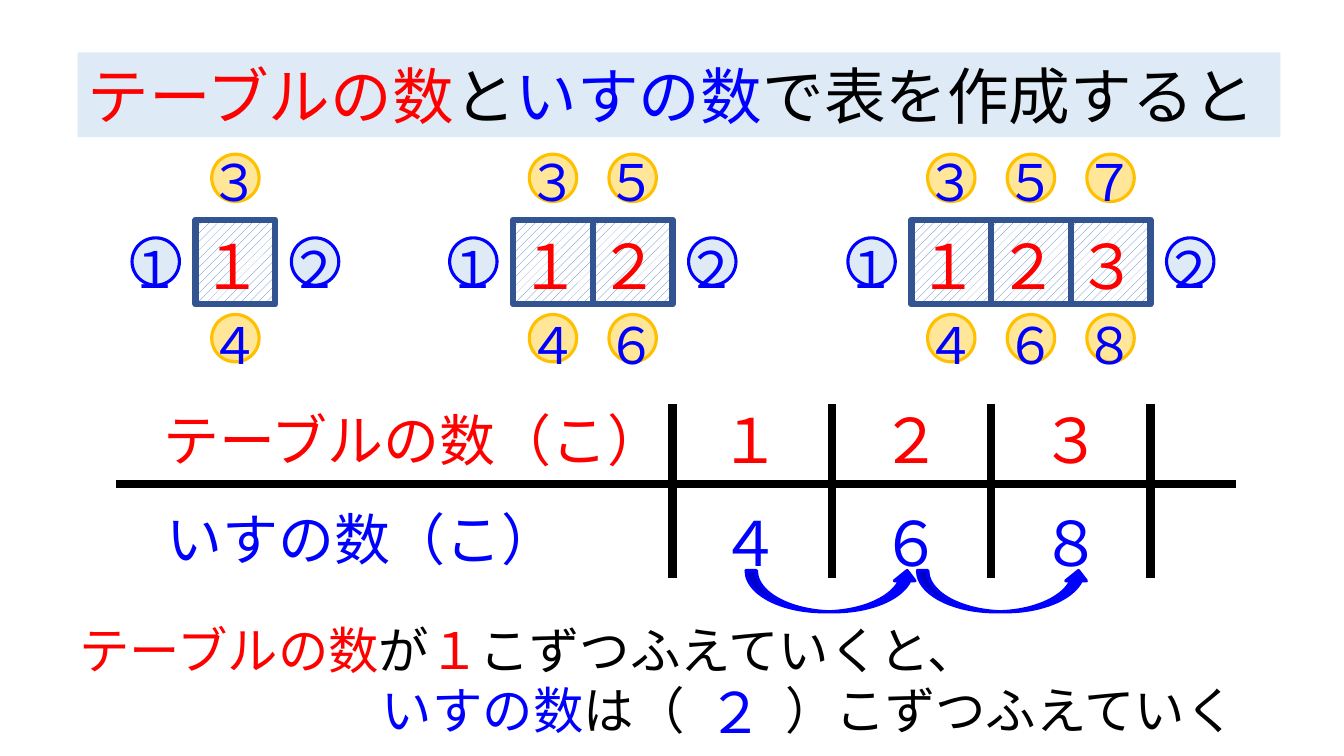
"""Build the slide that tabulates tables against chairs."""
from dataclasses import dataclass
from typing import Any

from lxml import etree
from pptx import Presentation
from pptx import util as u
from pptx.dml import color
from pptx.enum import dml, shapes, text
from pptx.oxml import ns

PX = 9144


@dataclass(frozen=True)
class Theme:
    """Colours, type sizes and line widths."""
    font: str = "Noto Sans CJK JP"
    red: str = "FF0000"
    blue: str = "0000FF"
    black: str = "000000"
    white: str = "FFFFFF"
    pale: str = "DEEBF7"
    gold: str = "FFC000"
    cream: str = "FFE699"
    hatch: str = "4472C4"
    navy: str = "325491"
    large: int = 44
    label: int = 40
    small: int = 36
    rule: float = 6
    frame: float = 4.5
    thin: float = 2.25


@dataclass(frozen=True)
class Box:
    """A place in px."""
    x: int
    y: int
    w: int
    h: int


@dataclass(frozen=True)
class Span:
    """Words in one colour."""
    words: str
    tint: str


@dataclass(frozen=True)
class Group:
    """A row of joined tables."""
    x: int
    tables: str
    tops: str
    ends: str


@dataclass(frozen=True)
class Column:
    """A column of the number table."""
    tables: str
    chairs: str


T = Theme()
TILE, SEAT = 79, 47
GROUPS = [
    Group(194, "１", "３", "４"),
    Group(509, "１２", "３５", "４６"),
    Group(904, "１２３", "３５７", "４６８"),
]
COLUMNS = [Column("１", "４"), Column("２", "６"), Column("３", "８")]


def rgb(tint: str) -> color.RGBColor:
    """Turn a hex code into a colour."""
    return color.RGBColor.from_string(tint)


def place(item: Any, box: Box) -> None:
    """Move and size an item."""
    item.left, item.top = box.x * PX, box.y * PX
    item.width, item.height = box.w * PX, box.h * PX


def write(item: Any, lines: list[list[Span]], size: int, wrap: bool = False) -> None:
    """Fill an item with coloured lines."""
    frame = item.text_frame
    frame.word_wrap = wrap
    frame.auto_size = text.MSO_AUTO_SIZE.SHAPE_TO_FIT_TEXT
    frame.vertical_anchor = text.MSO_ANCHOR.TOP
    frame.text = "\n".join("" for _ in lines)
    for para, spans in zip(frame.paragraphs, lines):
        para.alignment = text.PP_ALIGN.LEFT
        for span in spans:
            run = para.add_run()
            run.text = span.words
            run.font.size = u.Pt(size)
            run.font.color.rgb = rgb(span.tint)
            run.font.name = T.font
            east = etree.SubElement(run.font._element, ns.qn("a:ea"))
            east.set("typeface", T.font)


def label(slide: Any, box: Box, words: str, tint: str, size: int, wrap: bool = False) -> None:
    """Add a text box of one colour."""
    item = slide.shapes.add_textbox(0, 0, 0, 0)
    place(item, box)
    write(item, [[Span(words, tint)]], size, wrap)


def solid(slide: Any, kind: Any, box: Box, fill: str, edge: str, width: float) -> Any:
    """Add a filled and outlined shape."""
    item = slide.shapes.add_shape(kind, 0, 0, 0, 0)
    place(item, box)
    item.shadow.inherit = False
    item.fill.solid()
    item.fill.fore_color.rgb = rgb(fill)
    item.line.color.rgb = rgb(edge)
    item.line.width = u.Pt(width)
    return item


def seat(slide: Any, x: int, y: int, words: str, fill: str, edge: str, lift: int) -> None:
    """Add a numbered chair."""
    solid(slide, shapes.MSO_SHAPE.OVAL, Box(x, y, SEAT, SEAT), fill, edge, T.thin)
    label(slide, Box(x - 12, y - lift, 71, 71), words, T.blue, T.small)


def row(slide: Any, group: Group) -> None:
    """Draw joined tables and the chairs around them."""
    for i, (num, top, end) in enumerate(zip(group.tables, group.tops, group.ends)):
        x = group.x + i * TILE
        tile = solid(slide, shapes.MSO_SHAPE.RECTANGLE, Box(x, 218, TILE, 84),
                     T.white, T.navy, T.frame)
        tile.fill.patterned()
        tile.fill.pattern = dml.MSO_PATTERN.PERCENT_20
        tile.fill.fore_color.rgb = rgb(T.hatch)
        tile.fill.back_color.rgb = rgb(T.white)
        label(slide, Box(x - 4, 221, 82, 84), num, T.red, T.large)
        seat(slide, x + 16, 153, top, T.cream, T.gold, 8)
        seat(slide, x + 16, 312, end, T.cream, T.gold, 5)
    right = group.x + len(group.tables) * TILE
    for x, num in ((group.x - 63, "１"), (right + 16, "２")):
        seat(slide, x, 236, num, T.pale, T.blue, 5)


def rule(slide: Any, x1: int, y1: int, x2: int, y2: int) -> None:
    """Draw a thick straight line."""
    item = slide.shapes.add_connector(shapes.MSO_CONNECTOR.STRAIGHT,
                                      x1 * PX, y1 * PX, x2 * PX, y2 * PX)
    item.line.color.rgb = rgb(T.black)
    item.line.width = u.Pt(T.rule)
    etree.SubElement(item._element.spPr, ns.qn("a:effectLst"))


def grid(slide: Any) -> None:
    """Draw the number table and its arrows."""
    for x in (740, 910):
        solid(slide, shapes.MSO_SHAPE.CURVED_UP_ARROW, Box(x, 566, 170, 41),
              T.blue, T.blue, T.thin)
    rule(slide, 115, 480, 1226, 480)
    for i in range(len(COLUMNS) + 1):
        x = 667 + i * 158
        rule(slide, x, 401, x, 573)
    label(slide, Box(152, 397, 528, 77), "テーブルの数（こ）", T.red, T.label, True)
    label(slide, Box(155, 496, 413, 77), "いすの数（こ）", T.blue, T.label, True)
    for i, col in enumerate(COLUMNS):
        x = 704 + i * 159
        label(slide, Box(x, 394, 82, 84), col.tables, T.red, T.large)
        label(slide, Box(x, 496, 82, 84), col.chairs, T.blue, T.large)


def finish(slide: Any) -> None:
    """Write the conclusion and its answer."""
    item = slide.shapes.add_textbox(0, 0, 0, 0)
    place(item, Box(69, 609, 1181, 131))
    write(item, [
        [Span("テーブルの数", T.red), Span("が", T.black), Span("１", T.red),
         Span("こずつふえていくと、", T.black)],
        [Span("いすの数", T.blue), Span("は（　　）こずつふえていく", T.black)],
    ], T.small)
    props = item.text_frame.paragraphs[1]._p.get_or_add_pPr()
    props.set("marL", str(u.Pt(6 * T.small)))
    props.set("indent", "0")
    label(slide, Box(692, 667, 76, 77), "２", T.blue, T.label)


def main() -> None:
    """Build and save the slide."""
    deck = Presentation()
    deck.slide_width, deck.slide_height = 1333 * PX, 750 * PX
    slide = deck.slides.add_slide(deck.slide_layouts[5])
    title = slide.shapes.title
    place(title, Box(77, 52, 1193, 84))
    title.fill.solid()
    title.fill.fore_color.rgb = rgb(T.pale)
    write(title, [[Span("テーブルの数", T.red), Span("と", T.black),
                   Span("いすの数", T.blue), Span("で表を作成すると", T.black)]], T.large)
    for group in GROUPS:
        row(slide, group)
    grid(slide)
    finish(slide)
    deck.save("out.pptx")


if __name__ == "__main__":
    main()
